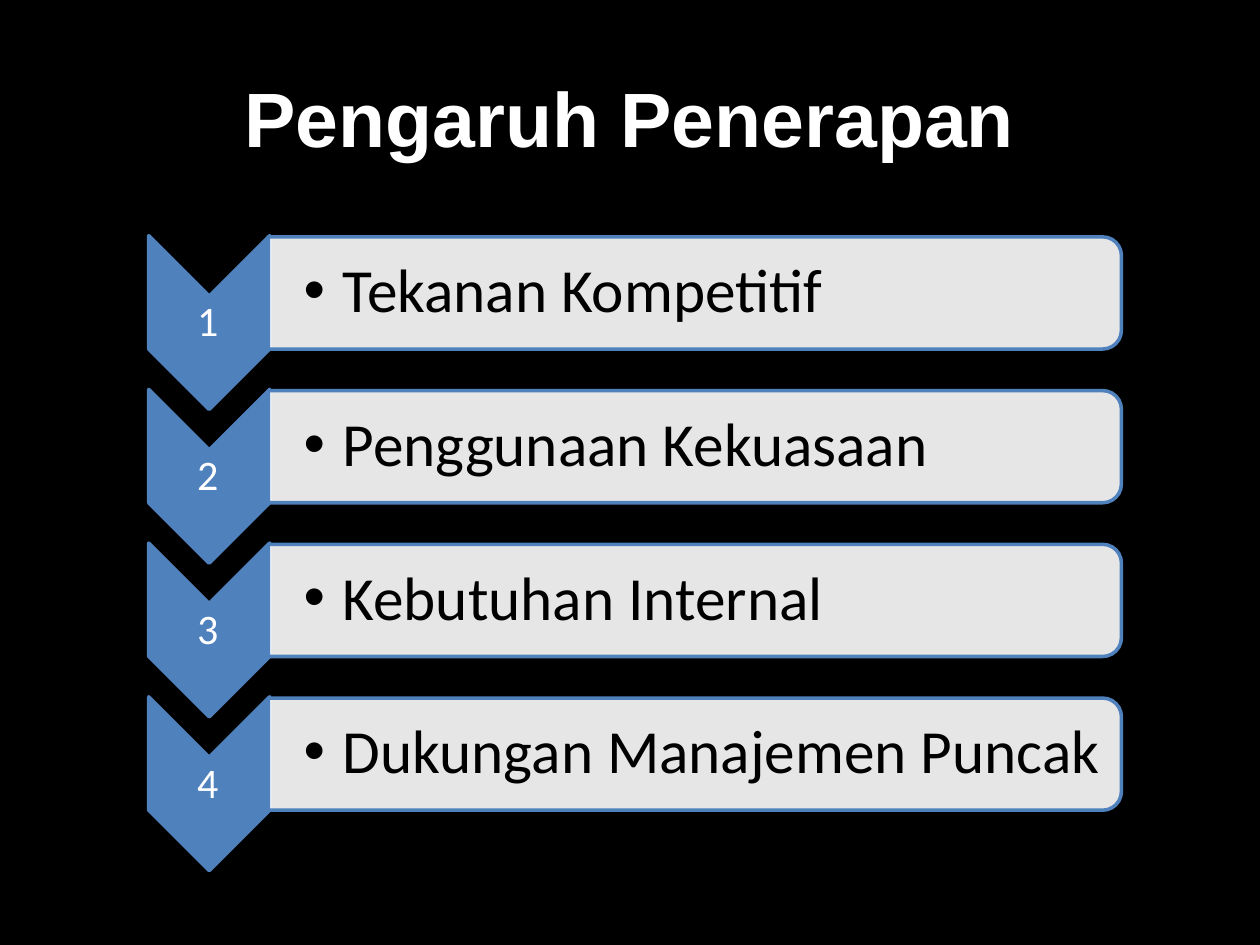
"""Build the "Pengaruh Penerapan" slide: four numbered chevrons with labelled bars."""
from lxml.etree import SubElement
from pptx import Presentation
from pptx.dml.color import RGBColor
from pptx.enum.shapes import MSO_SHAPE
from pptx.enum.text import MSO_ANCHOR, PP_ALIGN
from pptx.oxml.ns import qn
from pptx.util import Inches, Pt

FACTORS = [
    "Tekanan Kompetitif",
    "Penggunaan Kekuasaan",
    "Kebutuhan Internal",
    "Dukungan Manajemen Puncak",
]
ROW_PITCH = 1.22
BLUE, WHITE, BLACK = "4F81BD", "FFFFFF", "000000"


def color(value):
    """Turn a hex string into a colour."""
    return RGBColor.from_string(value)


def add_text(slide, box, text, size, font, fill, bold=False, align=PP_ALIGN.CENTER,
             inset=0.02, left_inset=0.02, spacing=0.9):
    """Add a vertically centred one-line text box and return its paragraph."""
    tf = slide.shapes.add_textbox(*map(Inches, box)).text_frame
    tf.word_wrap = True
    tf.vertical_anchor = MSO_ANCHOR.MIDDLE
    tf.margin_left = Inches(left_inset)
    tf.margin_right = tf.margin_top = tf.margin_bottom = Inches(inset)
    p = tf.paragraphs[0]
    p.alignment = align
    p.line_spacing = spacing
    r = p.add_run()
    r.text = text
    r.font.size = Pt(size)
    r.font.name = font
    r.font.bold = bold
    r.font.color.rgb = color(fill)
    return p


def add_bullet(p):
    """Give a paragraph a round bullet with a hanging indent."""
    pPr = p._p.get_or_add_pPr()
    pPr.set("marL", str(Inches(0.31)))
    pPr.set("indent", str(-Inches(0.31)))
    SubElement(pPr, qn("a:buFont")).set("typeface", "Arial")
    SubElement(pPr, qn("a:buChar")).set("char", "•")


def add_turned_shape(slide, kind, box, fill, alpha=None):
    """Add a blue-edged shape turned a quarter clockwise, optionally translucent."""
    sp = slide.shapes.add_shape(kind, *map(Inches, box))
    sp.rotation = 90
    sp.shadow.inherit = False
    sp.fill.solid()
    sp.fill.fore_color.rgb = color(fill)
    sp.line.color.rgb = color(BLUE)
    sp.line.width = Pt(2)
    if alpha is not None:
        clr = sp._element.spPr.find(qn("a:solidFill")).find(qn("a:srgbClr"))
        SubElement(clr, qn("a:alpha")).set("val", str(alpha * 1000))


def add_factor(slide, index, text):
    """Add one row: chevron, number, bar and bulleted label."""
    dy = index * ROW_PITCH
    add_turned_shape(slide, MSO_SHAPE.CHEVRON, (0.97, 2.08 + dy, 1.38, 0.96), BLUE)
    add_text(slide, (1.17, 2.36 + dy, 0.96, 0.41), str(index + 1), 24, "Calibri", WHITE)
    add_turned_shape(slide, MSO_SHAPE.ROUND_2_SAME_RECTANGLE,
                     (5.07, -1.06 + dy, 0.89, 6.77), WHITE, alpha=90)
    p = add_text(slide, (2.14, 1.92 + dy, 6.73, 0.81), text, 35, "Calibri", BLACK,
                 align=PP_ALIGN.LEFT, left_inset=0.27)
    add_bullet(p)


def main():
    """Build and save the slide."""
    prs = Presentation()
    prs.slide_width, prs.slide_height = Inches(10), Inches(7.5)
    slide = prs.slides.add_slide(prs.slide_layouts[6])
    slide.background.fill.solid()
    slide.background.fill.fore_color.rgb = color(BLACK)
    add_text(slide, (0.5, 0.3, 9, 1.25), "Pengaruh Penerapan", 44, "Arial", WHITE,
             bold=True, inset=0.1, left_inset=0.1, spacing=1.0)
    for index, text in enumerate(FACTORS):
        add_factor(slide, index, text)
    prs.save("out.pptx")


if __name__ == "__main__":
    main()
